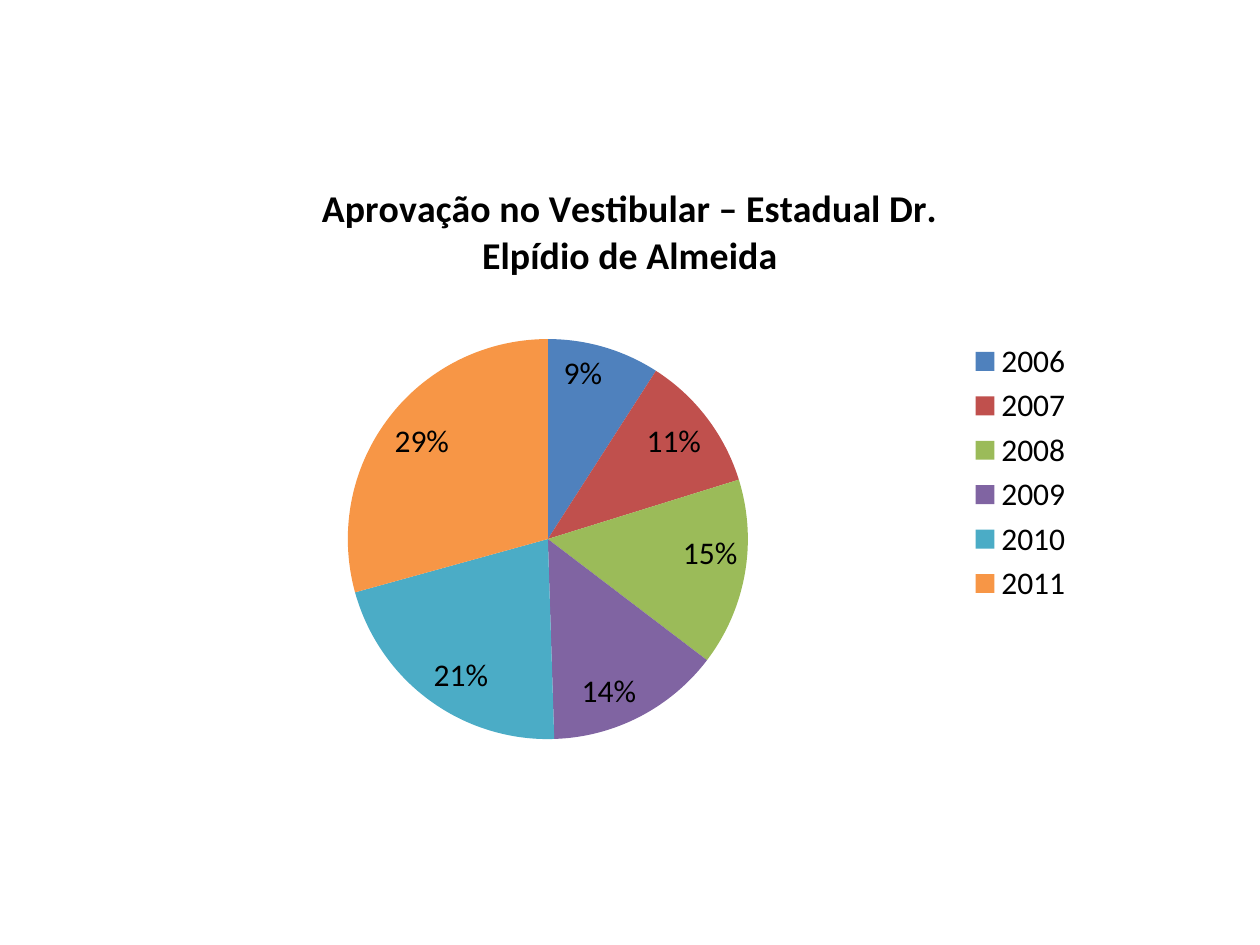
from lxml.etree import SubElement
from pptx import Presentation
from pptx.chart.data import CategoryChartData
from pptx.dml.color import RGBColor
from pptx.enum.chart import XL_CHART_TYPE, XL_LABEL_POSITION, XL_LEGEND_POSITION
from pptx.oxml.ns import qn
from pptx.util import Inches, Pt

COLORS = {
    "text": "000000",
    "2006": "4F81BD",
    "2007": "C0504D",
    "2008": "9BBB59",
    "2009": "8064A2",
    "2010": "4BACC6",
    "2011": "F79646",
}
APPROVALS = {"2006": 9, "2007": 11, "2008": 15, "2009": 14, "2010": 21, "2011": 29}
PIE_AREA = {"x": 0.19, "y": 0.29, "w": 0.44, "h": 0.63}


class SlideBuilder:
    font_name = "Calibri"
    body_size = Pt(18)
    title_size = Pt(21.6)

    def __init__(self, slide):
        self.slide = slide

    def style(self, font, size, bold=False):
        font.name = self.font_name
        font.size = size
        font.bold = bold
        font.color.rgb = RGBColor.from_string(COLORS["text"])

    def place_plot(self, chart, area):
        plot_area = chart._chartSpace.chart.plotArea
        for automatic in plot_area.findall(qn("c:layout")):
            plot_area.remove(automatic)
        layout = SubElement(plot_area, qn("c:layout"))
        plot_area.insert(0, layout)
        manual = SubElement(layout, qn("c:manualLayout"))
        settings = {"layoutTarget": "inner", "xMode": "edge", "yMode": "edge", **area}
        for tag, value in settings.items():
            SubElement(manual, qn(f"c:{tag}")).set("val", str(value))

    def pie(self, title, values, left, top, width, height):
        approval_data = CategoryChartData()
        approval_data.categories = list(values)
        approval_data.add_series("Series 1", list(values.values()))
        chart = self.slide.shapes.add_chart(
            XL_CHART_TYPE.PIE, Inches(left), Inches(top),
            Inches(width), Inches(height), approval_data,
        ).chart
        self.style(chart.font, self.body_size)

        chart.has_title = True
        heading = chart.chart_title.text_frame
        heading.text = title
        self.style(heading.paragraphs[0].font, self.title_size, bold=True)
        chart.chart_title.include_in_layout = False

        chart.has_legend = True
        chart.legend.position = XL_LEGEND_POSITION.RIGHT
        chart.legend.include_in_layout = False

        plot = chart.plots[0]
        plot.vary_by_categories = True
        for index, year in enumerate(values):
            slice_fill = plot.series[0].points[index].format.fill
            slice_fill.solid()
            slice_fill.fore_color.rgb = RGBColor.from_string(COLORS[year])

        plot.has_data_labels = True
        labels = plot.data_labels
        labels.show_value = False
        labels.show_percentage = True
        labels.number_format = "0%"
        labels.number_format_is_linked = False
        labels.position = XL_LABEL_POSITION.INSIDE_END
        self.style(labels.font, self.body_size)
        self.place_plot(chart, PIE_AREA)


def main():
    presentation = Presentation()
    presentation.slide_width = Inches(10)
    presentation.slide_height = Inches(7.5)
    builder = SlideBuilder(presentation.slides.add_slide(presentation.slide_layouts[6]))
    builder.pie(
        "Aprovação no Vestibular – Estadual Dr. Elpídio de Almeida",
        APPROVALS, 1.38, 1.23, 7.24, 5.04,
    )
    presentation.save("out.pptx")


if __name__ == "__main__":
    main()
